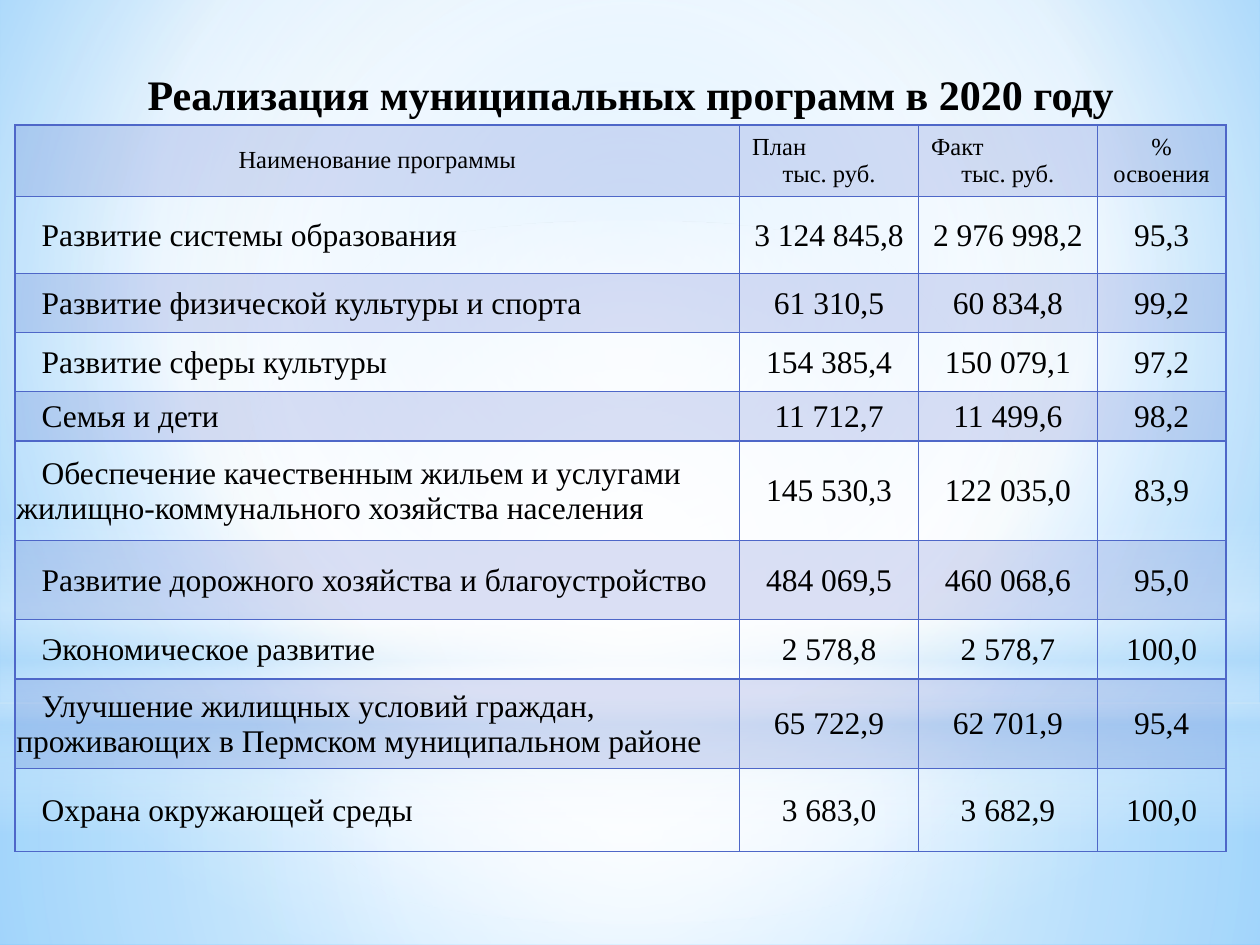
from pptx import Presentation
from pptx.dml.color import RGBColor
from pptx.enum.shapes import MSO_SHAPE
from pptx.enum.text import MSO_ANCHOR, PP_ALIGN
from pptx.oxml import parse_xml
from pptx.oxml.ns import nsdecls, qn
from pptx.util import Inches, Pt

BLACK = RGBColor(0x00, 0x00, 0x00)
WHITE = RGBColor(0xFF, 0xFF, 0xFF)
INDIGO = RGBColor(0x4E, 0x67, 0xC8)
PALE = RGBColor(0xB4, 0xDC, 0xFA)
SKY = RGBColor(0x9E, 0xD5, 0xFF)
BLUE = RGBColor(0x5B, 0xB9, 0xFF)
FONT = "Times New Roman"

COLS = [5.75, 1.42, 1.42, 1.02]
ROWS = [0.57, 0.61, 0.47, 0.47, 0.39, 0.79, 0.63, 0.47, 0.71, 0.66]
HEAD = ["Наименование программы", "План\nтыс. руб.", "Факт\nтыс. руб.", "% освоения"]
DATA = [
    ["Развитие системы образования", "3 124 845,8", "2 976 998,2", "95,3"],
    ["Развитие физической культуры и спорта", "61 310,5", "60 834,8", "99,2"],
    ["Развитие сферы культуры", "154 385,4", "150 079,1", "97,2"],
    ["Семья и дети", "11 712,7", "11 499,6", "98,2"],
    ["Обеспечение качественным жильем и услугами жилищно-коммунального хозяйства населения",
     "145 530,3", "122 035,0", "83,9"],
    ["Развитие дорожного хозяйства и благоустройство", "484 069,5", "460 068,6", "95,0"],
    ["Экономическое развитие", "2 578,8", "2 578,7", "100,0"],
    ["Улучшение жилищных условий граждан, проживающих в Пермском муниципальном районе",
     "65 722,9", "62 701,9", "95,4"],
    ["Охрана окружающей среды", "3 683,0", "3 682,9", "100,0"],
]

MID = (50, 50, 50, 50)
GLOWS = [
    (MSO_SHAPE.RECTANGLE, (0, 5.58, 10, 1.92),
     [(0, WHITE, 91), (37, WHITE, 76), (100, PALE, 79)], MID),
    (MSO_SHAPE.RECTANGLE, (0, 0, 10, 5.58),
     [(0, WHITE, 89), (48, WHITE, 62), (100, PALE, 79)], MID),
    (MSO_SHAPE.RECTANGLE, (0, 4.12, 10, 2.5),
     [(0, WHITE, 0), (29, WHITE, 30), (45, PALE, 40), (55, WHITE, 26),
      (65, PALE, 60), (100, WHITE, 0)], None),
    (MSO_SHAPE.OVAL, (0, 1.75, 10, 5.58), [(0, WHITE, 100), (56, WHITE, 0)], MID),
]


def make_grad(stops, focus):
    marks = "".join(
        f'<a:gs pos="{pos * 1000}"><a:srgbClr val="{color}">'
        f'<a:alpha val="{alpha * 1000}"/></a:srgbClr></a:gs>'
        for pos, color, alpha in stops)
    if focus:
        left, top, right, bottom = (n * 1000 for n in focus)
        shade = (f'<a:path path="circle"><a:fillToRect l="{left}" t="{top}" '
                 f'r="{right}" b="{bottom}"/></a:path>')
    else:
        shade = '<a:lin ang="5400000" scaled="0"/>'
    return parse_xml(f'<a:gradFill {nsdecls("a")} rotWithShape="1">'
                     f'<a:gsLst>{marks}</a:gsLst>{shade}</a:gradFill>')


def swap_fill(owner, grad):
    solid = owner.find(qn("a:solidFill"))
    owner.replace(solid, grad)


def add_backdrop(slide):
    slide.background.fill.solid()
    stops = [(0, SKY, 100), (60, WHITE, 100), (100, BLUE, 100)]
    swap_fill(slide.element.find(".//" + qn("p:bgPr")), make_grad(stops, (20, 10, 20, 60)))
    for kind, box, stops, focus in GLOWS:
        glow = slide.shapes.add_shape(kind, *map(Inches, box))
        glow.shadow.inherit = False
        glow.line.fill.background()
        glow.fill.solid()
        swap_fill(glow.element.spPr, make_grad(stops, focus))


def set_font(para, size, bold=False):
    font = para.font
    font.name = FONT
    font.size = Pt(size)
    font.bold = bold
    font.color.rgb = BLACK


def add_title(slide, box):
    frame = slide.shapes.add_textbox(*map(Inches, box)).text_frame
    frame.word_wrap = True
    frame.vertical_anchor = MSO_ANCHOR.BOTTOM
    frame.margin_top = frame.margin_bottom = 0
    para = frame.paragraphs[0]
    para.text = "Реализация муниципальных программ в 2020 году"
    para.alignment = PP_ALIGN.CENTER
    set_font(para, 24, True)


def style_cell(cell, shaded):
    cell.vertical_anchor = MSO_ANCHOR.MIDDLE
    if shaded:
        cell.fill.solid()
        cell.fill.fore_color.rgb = INDIGO
    else:
        cell.fill.background()
    props = cell._tc.get_or_add_tcPr()
    for color in props.iter(qn("a:srgbClr")):
        color.append(parse_xml(f'<a:alpha {nsdecls("a")} val="20000"/>'))
    for spot, side in enumerate(("lnL", "lnR", "lnT", "lnB")):
        props.insert(spot, parse_xml(
            f'<a:{side} {nsdecls("a")} w="{Pt(1)}"><a:solidFill>'
            f'<a:srgbClr val="{INDIGO}"/></a:solidFill></a:{side}>'))


def fill_cell(cell, text, head, first):
    sides = (0.1, 0.05, 0.1, 0.05) if head else (0.01, 0.01, 0.01, 0)
    (cell.margin_left, cell.margin_top,
     cell.margin_right, cell.margin_bottom) = map(Inches, sides)
    cell.text = text
    paras = cell.text_frame.paragraphs
    for para in paras:
        para.alignment = PP_ALIGN.CENTER
        set_font(para, 14 if head else 18)
    if len(paras) > 1:
        paras[0].alignment = PP_ALIGN.LEFT
    if first and not head:
        paras[0].alignment = PP_ALIGN.LEFT
        paras[0]._p.get_or_add_pPr().set("indent", str(Inches(0.2)))


def add_grid(slide, box):
    table = slide.shapes.add_table(len(ROWS), len(COLS), *map(Inches, box)).table
    table.first_row = table.horz_banding = False
    for col, width in zip(table.columns, COLS):
        col.width = Inches(width)
    for row, height in zip(table.rows, ROWS):
        row.height = Inches(height)
    for r, texts in enumerate([HEAD] + DATA):
        for c, text in enumerate(texts):
            cell = table.cell(r, c)
            fill_cell(cell, text, r == 0, c == 0)
            style_cell(cell, r % 2 == 0)


def main():
    deck = Presentation()
    deck.slide_width, deck.slide_height = Inches(10), Inches(7.5)
    slide = deck.slides.add_slide(deck.slide_layouts[6])
    add_backdrop(slide)
    add_title(slide, (0.55, 0.47, 8.91, 0.47))
    add_grid(slide, (0.12, 0.99, sum(COLS), sum(ROWS)))
    deck.save("out.pptx")


if __name__ == "__main__":
    main()
